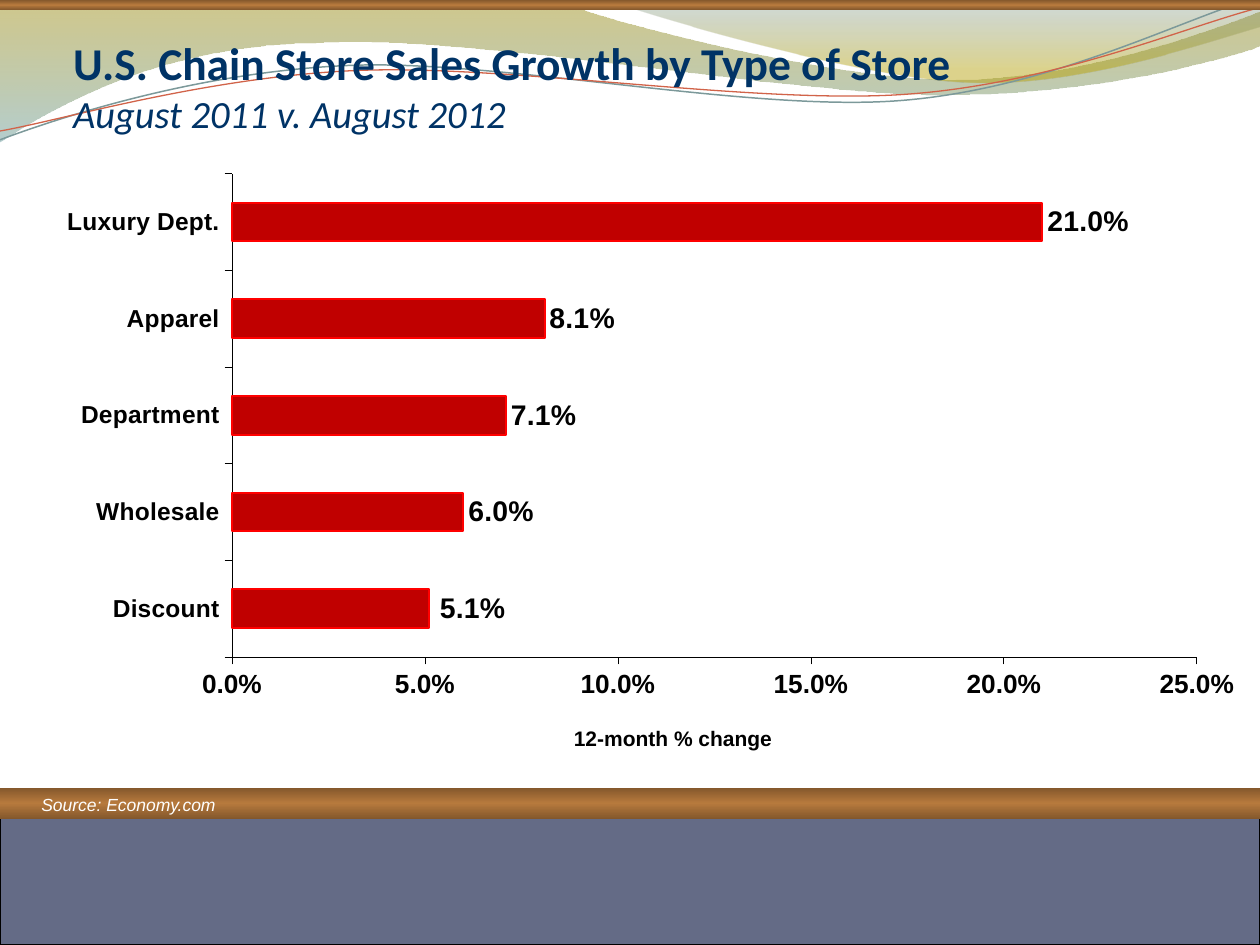
from lxml import etree
from pptx import Presentation
from pptx.chart.data import CategoryChartData
from pptx.dml.color import RGBColor
from pptx.enum import chart as ch, shapes, text
from pptx.oxml import parse_xml
from pptx.oxml.ns import qn
from pptx.util import Inches, Pt


def color(hex_value):
    return RGBColor.from_string(hex_value)


def fill_vertical(shape, stops):
    """Fill top to bottom with (position %, colour, opacity %) stops, no outline."""
    shape.shadow.inherit = False
    shape.line.fill.background()
    shape.fill.gradient()
    shape.fill.gradient_angle = 270
    stop_list = shape.element.spPr.find(".//" + qn("a:gsLst"))
    for old in list(stop_list):
        stop_list.remove(old)
    for position, hex_value, opacity in stops:
        stop = etree.SubElement(stop_list, qn("a:gs"), pos=str(position * 1000))
        rgb = etree.SubElement(stop, qn("a:srgbClr"), val=hex_value)
        if opacity < 100:
            etree.SubElement(rgb, qn("a:alpha"), val=str(opacity * 1000))


prs = Presentation()
prs.slide_width, prs.slide_height = Inches(10), Inches(7.5)
slide = prs.slides.add_slide(prs.slide_layouts[5])

# Waves: two-number steps are straight, six-number steps are Bezier curves
waves = [
    ([(0, -0.01), (4.4, -0.01), (4.76, 0.17, 6.64, 0.63, 7.58, 0.63),
      (8.53, 0.63, 9.58, 0.26, 10, 0.09), (10.01, 0.36),
      (9.83, 0.44, 8.7, 0.76, 7.46, 0.75), (6.22, 0.75, 3.82, 0.28, 2.57, 0.34),
      (1.29, 0.35, 0.46, 0.83, -0.01, 1.13)],
     [(0, "978500", 45), (100, "77A5A6", 55)], None),
    ([(4.79, -0.01), (5.09, 0.11, 6.82, 0.62, 7.69, 0.65),
      (8.56, 0.69, 9.61, 0.32, 10, 0.21), (10, 0)],
     [(0, "648484", 30), (80, "B49F00", 45)], None),
    ([(0, 1.11), (0.48, 0.93, 1.58, 0.57, 2.77, 0.52),
      (3.95, 0.47, 5.93, 0.89, 7.13, 0.8), (8.33, 0.71, 9.38, 0.15, 9.98, -0.02)],
     None, ("7C999A", 0.85)),
    ([(0, 1.04), (0.47, 0.96, 1.64, 0.61, 2.83, 0.56),
      (4.03, 0.51, 5.97, 0.83, 7.17, 0.75), (8.36, 0.67, 9.41, 0.21, 10, 0.06)],
     None, ("D16349", 0.75)),
]
for steps, stops, stroke in waves:
    points = [(Inches(x), Inches(y))
              for step in steps for x, y in zip(step[::2], step[1::2])]
    builder = slide.shapes.build_freeform(*points[0])
    builder.add_line_segments(points[1:], close=stroke is None)
    wave = builder.convert_to_shape()
    # Join the three segments of each curved step into one Bezier curve
    segments = iter(wave.element.spPr.findall(".//" + qn("a:lnTo")))
    for step in steps[1:]:
        segment = next(segments)
        if len(step) == 6:
            segment.addprevious(curve := etree.Element(qn("a:cubicBezTo")))
            for piece in (segment, next(segments), next(segments)):
                curve.append(piece[0])
                piece.getparent().remove(piece)
    if stops:
        fill_vertical(wave, stops)
    else:
        wave.shadow.inherit = False
        wave.fill.background()
        wave.line.color.rgb = color(stroke[0])
        wave.line.width = Pt(stroke[1])

# Bands
footer = slide.shapes.add_shape(shapes.MSO_SHAPE.RECTANGLE,
                                0, Inches(6.42), Inches(10), Inches(1.08))
footer.shadow.inherit = False
footer.fill.solid()
footer.fill.fore_color.rgb = color("646B86")
footer.line.color.rgb = color("000000")
footer.line.width = Pt(0.75)
for top, height in [(0, 0.08), (6.25, 0.25)]:
    band = slide.shapes.add_shape(shapes.MSO_SHAPE.RECTANGLE,
                                  0, Inches(top), Inches(10), Inches(height))
    fill_vertical(band, [(0, "83572C", 100), (50, "B77A3D", 100), (100, "83572C", 100)])

# Title, above the waves
title = slide.shapes.title
title.element.getparent().append(title.element)
title.left, title.top, title.width, title.height = map(Inches, (0.58, 0.25, 8.5, 0.83))
frame = title.text_frame
frame.auto_size = text.MSO_AUTO_SIZE.NONE
frame.word_wrap = True
frame.vertical_anchor = text.MSO_ANCHOR.BOTTOM
frame.margin_left = frame.margin_right = frame.margin_bottom = 0
frame.margin_top = Inches(0.05)
heading = frame.paragraphs[0]
heading.text = "U.S. Chain Store Sales Growth by Type of Store \vAugust 2011 v. August 2012"
heading.alignment = text.PP_ALIGN.LEFT
for run, size, main in zip(heading.runs, (26, 22), (True, False)):
    run.font.name = "Calibri"
    run.font.size = Pt(size)
    run.font.bold = main
    run.font.italic = not main
    run.font.color.rgb = color("003366")

# Source line
source = slide.shapes.add_textbox(Inches(0.23), Inches(6.25), Inches(1.61), Inches(0.27))
source.text_frame.word_wrap = False
source.text_frame.auto_size = text.MSO_AUTO_SIZE.SHAPE_TO_FIT_TEXT
source.text_frame.text = "Source: Economy.com"
source_font = source.text_frame.paragraphs[0].runs[0].font
source_font.name, source_font.size, source_font.italic = "Arial", Pt(10), True
source_font.color.rgb = color("FFFFFF")

# Sales growth chart
growth = CategoryChartData(number_format="0.0%")
growth.categories = ["Discount", "Wholesale", "Department", "Apparel", "Luxury Dept."]
growth.add_series("Series 1", [0.051, 0.06, 0.071, 0.081, 0.21])
chart = slide.shapes.add_chart(ch.XL_CHART_TYPE.BAR_CLUSTERED, Inches(0.17), Inches(1.25),
                               Inches(9.83), Inches(4.92), growth).chart
chart.has_legend = chart.has_title = False

plot = chart.plots[0]
plot.gap_width = 150
plot.vary_by_categories = False
bars = plot.series[0]
bars.format.fill.solid()
bars.format.fill.fore_color.rgb = color("C00000")
bars.format.line.color.rgb = color("FF0000")
bars.format.line.width = Pt(1.16)
labels = bars.data_labels
labels.show_value = True
labels.number_format, labels.number_format_is_linked = "0.0%", False
labels.position = ch.XL_LABEL_POSITION.OUTSIDE_END
discount_label = bars.points[0].data_label
discount_label.position = ch.XL_LABEL_POSITION.OUTSIDE_END

stores, change = chart.category_axis, chart.value_axis
for axis in (stores, change):
    axis.has_major_gridlines = False
    axis.major_tick_mark = ch.XL_TICK_MARK.OUTSIDE
    axis.minor_tick_mark = ch.XL_TICK_MARK.NONE
    axis.format.line.color.rgb = color("000000")
    axis.format.line.width = Pt(0.29)
stores.tick_label_position = ch.XL_TICK_LABEL_POSITION.LOW
change.minimum_scale, change.maximum_scale, change.major_unit = 0, 0.25, 0.05
change.tick_labels.number_format = "0.0%"
change.tick_labels.number_format_is_linked = False
change.axis_title.text_frame.text = "12-month % change"
axis_title_font = change.axis_title.text_frame.paragraphs[0].runs[0].font

for font, size in [(chart.font, 20.8), (labels.font, 16.2), (discount_label.font, 16.2),
                   (stores.tick_labels.font, 14), (change.tick_labels.font, 15),
                   (axis_title_font, 12)]:
    font.name, font.size, font.bold = "Arial", Pt(size), True
    font.color.rgb = color("000000")

# Fixed places, as fractions of the chart; the label's is a shift to the right
plot_area = chart.element.find(".//" + qn("c:plotArea"))
first_label = chart.element.find(".//" + qn("c:dLbl"))
places = [
    (plot_area, 0, dict(layoutTarget="inner", xMode="edge", yMode="edge",
                        x=0.17, y=0.026, w=0.779, h=0.78)),
    (change.axis_title.element, 1, dict(xMode="edge", yMode="edge", x=0.443, y=0.91)),
    (first_label, 1, dict(x=0.005, y=0)),
]
for parent, index, values in places:
    for old in parent.findall(qn("c:layout")):
        parent.remove(old)
    layout = parse_xml('<c:layout xmlns:c="http://schemas.openxmlformats.org/'
                       'drawingml/2006/chart"><c:manualLayout/></c:layout>')
    for tag, value in values.items():
        etree.SubElement(layout[0], qn("c:" + tag), val=str(value))
    parent.insert(index, layout)

prs.save("out.pptx")
